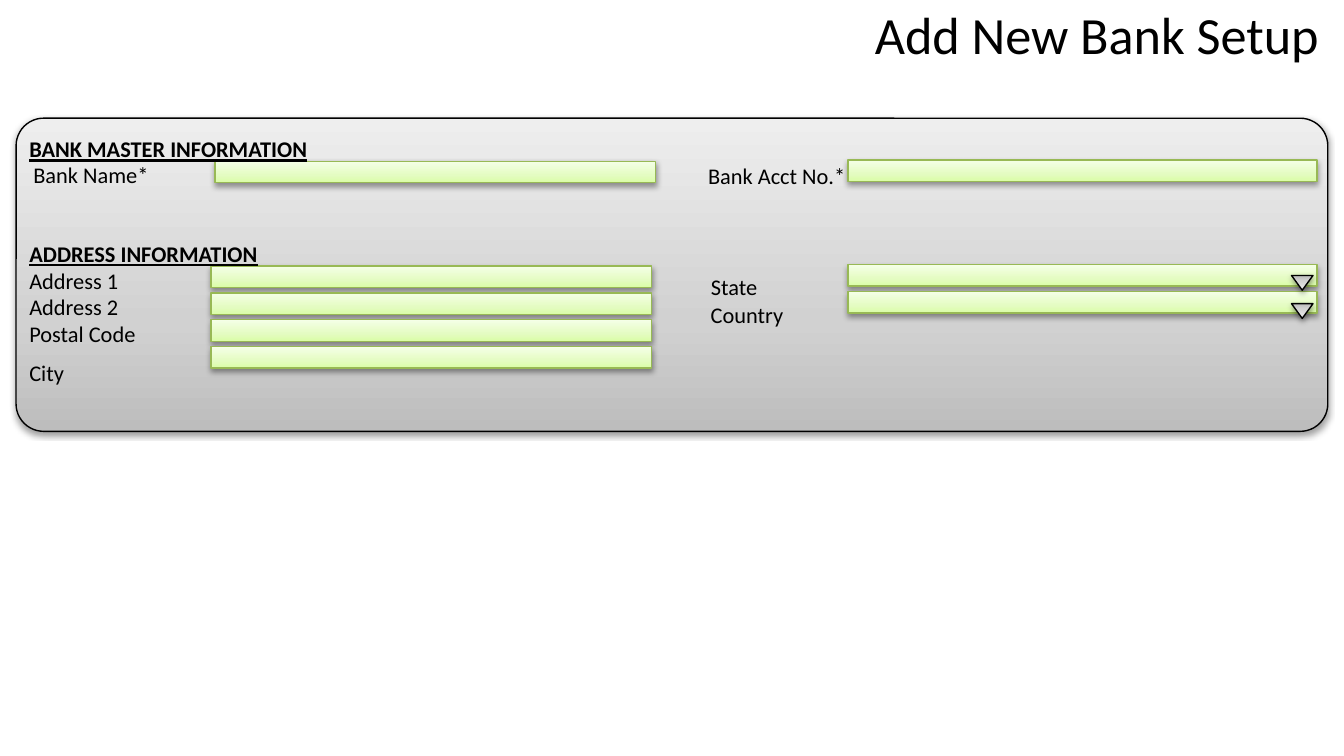
from copy import deepcopy
from dataclasses import dataclass

from lxml.etree import SubElement
from pptx import Presentation
from pptx.dml.color import RGBColor
from pptx.enum.shapes import MSO_SHAPE
from pptx.enum.text import MSO_ANCHOR, MSO_AUTO_SIZE, PP_ALIGN
from pptx.oxml.ns import qn
from pptx.util import Inches, Pt


@dataclass(frozen=True)
class Style:
    stops: tuple[str, str, str]
    line: str


@dataclass(frozen=True)
class Box:
    left: float
    top: float
    width: float
    height: float

    def emu(self) -> list[int]:
        return [Inches(v) for v in (self.left, self.top, self.width, self.height)]


@dataclass(frozen=True)
class Label:
    text: str
    box: Box
    heading: bool = False
    wrap: bool = False


GREY = Style(("BDBDBD", "D1D1D1", "EEEEEE"), "000000")
GREEN = Style(("DAFDA7", "E4FCC2", "F5FFE7"), "98B955")
STOP_POSITIONS = (0, 0.35, 1)

LEFT_WIDTH, RIGHT_WIDTH, FIELD_HEIGHT = 3.28, 3.49, 0.16
ROW_PITCH = 0.2
FIELDS = [
    Box(1.6, 1.2, LEFT_WIDTH, FIELD_HEIGHT),
    *[Box(1.57, 1.98 + i * ROW_PITCH, LEFT_WIDTH, FIELD_HEIGHT) for i in range(4)],
    *[Box(6.31, top, RIGHT_WIDTH, FIELD_HEIGHT) for top in (1.19, 1.97, 1.97 + ROW_PITCH)],
]
DROPDOWN_ARROWS = [Box(9.61, top, 0.16, 0.11) for top in (2.05, 2.26)]

LABELS = [
    Label("BANK MASTER INFORMATION", Box(0.12, 0.96, 2.33, 0.29), heading=True),
    Label("Bank Name*", Box(0.15, 1.15, 1.07, 0.29)),
    Label("Bank Acct No.*", Box(5.17, 1.16, 1.24, 0.29)),
    Label("ADDRESS INFORMATION", Box(0.12, 1.74, 1.92, 0.29), heading=True),
    Label("Address 1", Box(0.12, 1.94, 0.87, 0.29)),
    Label("Address 2", Box(0.12, 2.13, 0.87, 0.29)),
    Label("Postal Code", Box(0.12, 2.33, 1, 0.29)),
    Label("City", Box(0.12, 2.62, 0.46, 0.3)),
    Label("State", Box(5.19, 1.98, 0.55, 0.3)),
    Label("Country", Box(5.19, 2.19, 0.76, 0.3), wrap=True),
]


def rgb(value: str) -> RGBColor:
    return RGBColor.from_string(value)


def add_shadow(shape) -> None:
    shape.shadow.inherit = False
    effects = shape._element.spPr.find(qn("a:effectLst"))
    shadow = SubElement(effects, qn("a:outerShdw"), blurRad=str(Pt(3.1)),
                        dist=str(Pt(1.6)), dir="5400000", rotWithShape="0")
    color = SubElement(shadow, qn("a:srgbClr"), val="000000")
    SubElement(color, qn("a:alpha"), val="38000")


def add_panel(slide, kind: MSO_SHAPE, box: Box, style: Style):
    """Add a shape with a three-stop vertical gradient, outline and shadow."""
    s = slide.shapes.add_shape(kind, *box.emu())
    s.fill.gradient()
    s.fill.gradient_angle = 90
    stop_list = s._element.spPr.find(f".//{qn('a:gsLst')}")
    stop_list.append(deepcopy(stop_list[-1]))
    for stop, position, color in zip(s.fill.gradient_stops, STOP_POSITIONS, style.stops):
        stop.position = position
        stop.color.rgb = rgb(color)
    s.line.color.rgb = rgb(style.line)
    s.line.width = Pt(0.75)
    add_shadow(s)
    return s


def write_text(shape, text: str, wrap: bool, align: PP_ALIGN, **font_format) -> None:
    tf = shape.text_frame
    frame_format = {"word_wrap": wrap, "vertical_anchor": MSO_ANCHOR.TOP,
                    "auto_size": MSO_AUTO_SIZE.SHAPE_TO_FIT_TEXT}
    for name, value in frame_format.items():
        setattr(tf, name, value)
    p = tf.paragraphs[0]
    p.alignment = align
    r = p.add_run()
    r.text = text
    for name, value in {"name": "Calibri", **font_format}.items():
        setattr(r.font, name, value)
    r.font.color.rgb = rgb("000000")


def add_label(slide, label: Label) -> None:
    s = slide.shapes.add_textbox(*label.box.emu())
    emphasis = {"bold": True, "underline": True} if label.heading else {}
    write_text(s, label.text, label.wrap, PP_ALIGN.LEFT, size=Pt(12), **emphasis)


def set_title(slide, text: str, box: Box) -> None:
    title = slide.shapes.title
    for name, value in zip(("left", "top", "width", "height"), box.emu()):
        setattr(title, name, value)
    write_text(title, text, True, PP_ALIGN.CENTER, size=Pt(28))


def main() -> None:
    prs = Presentation()
    prs.slide_width = Inches(10)
    prs.slide_height = Inches(10 * 9 / 16)
    slide = prs.slides.add_slide(prs.slide_layouts[5])
    set_title(slide, "Add New Bank Setup", Box(6.1, -0.03, 4.12, 0.57))

    form = add_panel(slide, MSO_SHAPE.ROUNDED_RECTANGLE, Box(0.12, 0.88, 9.76, 2.33), GREY)
    form.adjustments[0] = 0.088
    for field in FIELDS:
        add_panel(slide, MSO_SHAPE.RECTANGLE, field, GREEN)
    for box in DROPDOWN_ARROWS:
        arrow = add_panel(slide, MSO_SHAPE.ISOSCELES_TRIANGLE, box, GREY)
        arrow._element.spPr.xfrm.set("flipV", "1")
    for label in LABELS:
        add_label(slide, label)

    prs.save("out.pptx")


if __name__ == "__main__":
    main()
